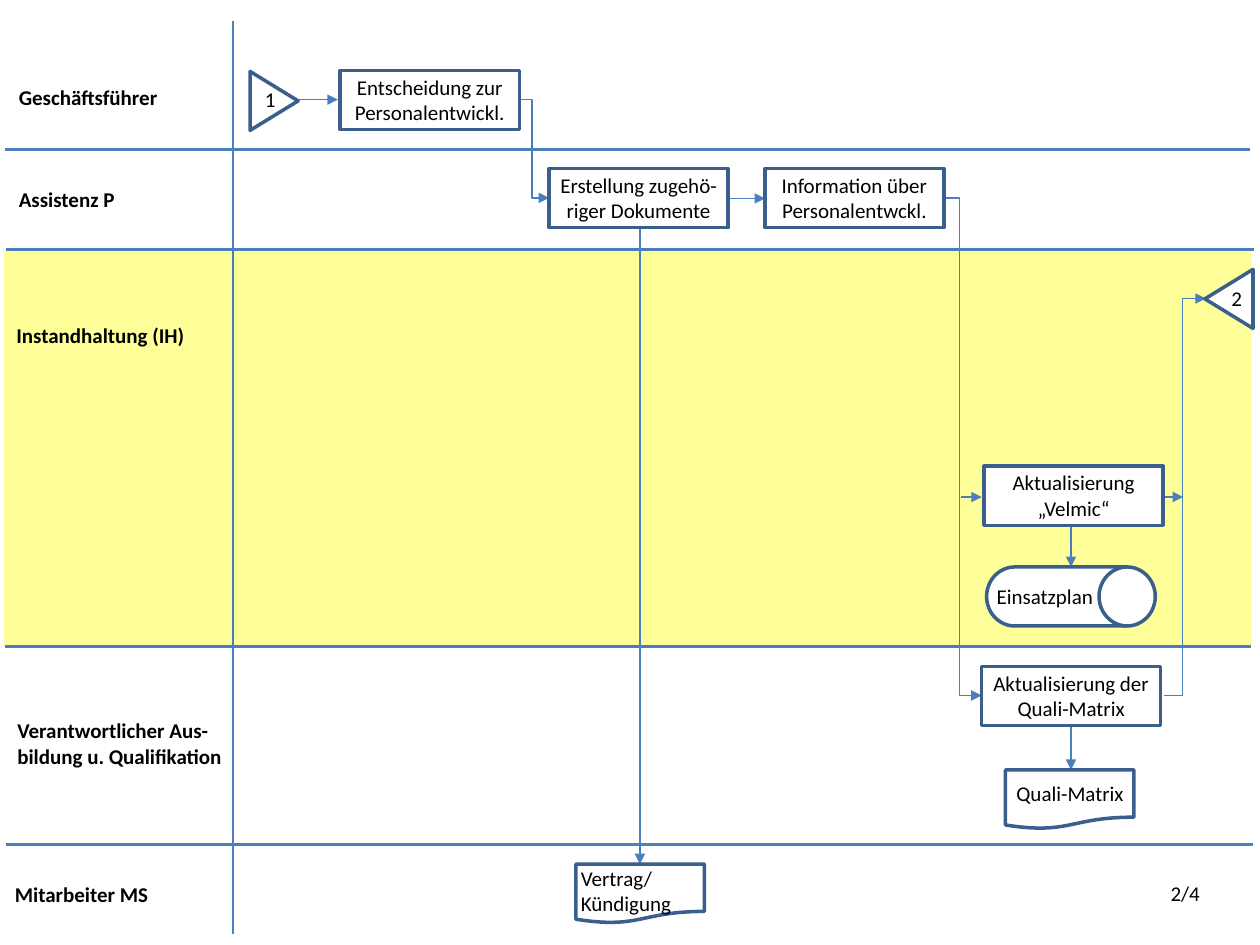
from dataclasses import dataclass

from lxml import etree
from pptx import Presentation
from pptx.dml.color import RGBColor
from pptx.enum.shapes import MSO_CONNECTOR, MSO_SHAPE
from pptx.enum.text import MSO_ANCHOR, MSO_AUTO_SIZE, PP_ALIGN
from pptx.oxml.ns import qn
from pptx.slide import Slide
from pptx.util import Cm, Pt

STRAIGHT, ELBOW = MSO_CONNECTOR.STRAIGHT, MSO_CONNECTOR.ELBOW
RECTANGLE = MSO_SHAPE.RECTANGLE
PROCESS = MSO_SHAPE.FLOWCHART_PROCESS
DOCUMENT = MSO_SHAPE.FLOWCHART_DOCUMENT
DRUM = MSO_SHAPE.FLOWCHART_DIRECT_ACCESS_STORAGE
TRIANGLE = MSO_SHAPE.FLOWCHART_EXTRACT
LEFT, CENTER, RIGHT = PP_ALIGN.LEFT, PP_ALIGN.CENTER, PP_ALIGN.RIGHT
TOP, MIDDLE = MSO_ANCHOR.TOP, MSO_ANCHOR.MIDDLE
FIT_SHAPE, FIXED = MSO_AUTO_SIZE.SHAPE_TO_FIT_TEXT, MSO_AUTO_SIZE.NONE

FONT = "Calibri"
BLACK, WHITE, YELLOW = "000000", "FFFFFF", "FFFF99"
FLOW_BLUE, OUTLINE_BLUE = "4B7EBC", "3A5F8C"
NODE_HEIGHT = 1.19
STEP_WIDTH = 3.61
STEP_LABEL_OVERHANG = 0.15
DOCUMENT_WIDTH = 2.59
TRIANGLE_HEIGHT = 0.97
LINE_HEIGHT, TEXT_MARGIN = 0.51, 0.25


@dataclass(frozen=True)
class Label:
    text: str
    left: float
    top: float
    width: float


@dataclass(frozen=True)
class Step:
    text: str
    left: float
    top: float


@dataclass(frozen=True)
class Node:
    kind: int
    left: float
    top: float
    width: float
    height: float = NODE_HEIGHT
    rotation: int = 0
    fill: str | None = WHITE


@dataclass(frozen=True)
class Flow:
    start: tuple[float, float]
    end: tuple[float, float]
    bend: float | None = None


LANE_LABELS = [
    Label("Geschäftsführer", 0.13, 1.57, 3.43),
    Label("Assistenz P", 0.13, 3.63, 2.46),
    Label("Instandhaltung (IH)", 0.08, 6.38, 3.96),
    Label("Verantwortlicher Aus-\nbildung u. Qualifikation", 0.1, 14.35, 4.88),
    Label("Mitarbeiter MS", 0.05, 17.65, 3.23),
]
LANE_BORDERS = [
    Flow((0.1, 3.02), (25.2, 3.02)),
    Flow((0.13, 5.03), (25.27, 5.03)),
    Flow((0.1, 13.03), (25.22, 13.03)),
    Flow((0.13, 17.02), (25.25, 17.02)),
    Flow((4.7, 18.82), (4.7, 0.43)),
]
STEPS = [
    Step("Entscheidung zur\nPersonalentwickl.", 6.86, 1.42),
    Step("Erstellung zugehö-\nriger Dokumente", 11.07, 3.4),
    Step("Information über\nPersonalentwckl.", 15.42, 3.4),
    Step("Aktualisierung\n„Velmic“", 19.84, 9.4),
    Step("Aktualisierung der\nQuali-Matrix", 19.79, 13.44),
]
NODES = [
    Node(TRIANGLE, 4.93, 1.55, NODE_HEIGHT, TRIANGLE_HEIGHT, 90),
    Node(TRIANGLE, 24.18, 5.54, NODE_HEIGHT, TRIANGLE_HEIGHT, 270),
    Node(DOCUMENT, 11.61, 17.42, DOCUMENT_WIDTH, fill=None),
    Node(DOCUMENT, 20.27, 15.52, DOCUMENT_WIDTH, fill=None),
    Node(DRUM, 19.89, 11.43, 3.4),
]
REFERENCE_LABELS = [Label("1", 5.08, 1.63, 0.74), Label("2", 24.56, 5.64, 0.74)]
RECORD_LABELS = [
    Label("Vertrag/\nKündigung", 11.46, 17.32, 2.34),
    Label("Quali-Matrix", 20.24, 15.62, 2.69),
    Label("Einsatzplan", 19.84, 11.63, 2.46),
]
FLOWS = [
    Flow((5.99, 2.01), (6.81, 2.01)),
    Flow((10.46, 2.01), (11.07, 3.99), 0.44),
    Flow((14.71, 4), (15.42, 4)),
    Flow((12.9, 4.62), (12.9, 17.42)),
    Flow((18.97, 3.99), (19.79, 14.02), 0.45),
    Flow((19.38, 10.02), (19.79, 10.02)),
    Flow((21.59, 10.62), (21.59, 11.43)),
    Flow((21.59, 14.63), (21.59, 15.52)),
    Flow((23.44, 10.02), (23.85, 10.02)),
    Flow((23.47, 14.02), (24.31, 6.02), 0.44),
]


def color(value: str) -> RGBColor:
    return RGBColor.from_string(value)


def add_text(slide: Slide, label: Label, *, bold=False, align=LEFT,
             anchor=TOP, wrap=False, fit=FIT_SHAPE, height=None) -> None:
    lines = label.text.split("\n")
    box_height = height or len(lines) * LINE_HEIGHT + TEXT_MARGIN
    frame = slide.shapes.add_textbox(
        Cm(label.left), Cm(label.top), Cm(label.width), Cm(box_height)
    ).text_frame
    frame.word_wrap = wrap
    frame.auto_size = fit
    frame.vertical_anchor = anchor
    frame.text = label.text
    for paragraph in frame.paragraphs:
        paragraph.alignment = align
        font = paragraph.runs[0].font
        font.name, font.size, font.bold = FONT, Pt(12), bold
        font.color.rgb = color(BLACK)


def add_node(slide: Slide, node: Node, outline: str | None = OUTLINE_BLUE) -> None:
    shape = slide.shapes.add_shape(
        node.kind, Cm(node.left), Cm(node.top), Cm(node.width), Cm(node.height)
    )
    shape.shadow.inherit = False
    shape.rotation = node.rotation
    if node.fill:
        shape.fill.solid()
        shape.fill.fore_color.rgb = color(node.fill)
    else:
        shape.fill.background()
    if outline:
        shape.line.color.rgb = color(outline)
        shape.line.width = Pt(2)
    else:
        shape.line.fill.background()


def add_step(slide: Slide, step: Step) -> None:
    add_node(slide, Node(PROCESS, step.left, step.top, STEP_WIDTH))
    label = Label(step.text, step.left - STEP_LABEL_OVERHANG, step.top - 0.05,
                  STEP_WIDTH + 2 * STEP_LABEL_OVERHANG)
    add_text(slide, label, align=CENTER)


def add_flow(slide: Slide, flow: Flow, width: float = 0.75, arrow: bool = True) -> None:
    kind = STRAIGHT if flow.bend is None else ELBOW
    points = [Cm(value) for value in (*flow.start, *flow.end)]
    connector = slide.shapes.add_connector(kind, *points)
    connector.line.color.rgb = color(FLOW_BLUE)
    connector.line.width = Pt(width)
    properties = connector._element.spPr
    if flow.bend is not None:
        adjustments = properties.find(qn("a:prstGeom")).get_or_add_avLst()
        etree.SubElement(adjustments, qn("a:gd"), name="adj1",
                         fmla=f"val {round(flow.bend * 100000)}")
    if arrow:
        etree.SubElement(properties.find(qn("a:ln")), qn("a:tailEnd"), type="triangle")
    etree.SubElement(properties, qn("a:effectLst"))


def main() -> None:
    presentation = Presentation()
    presentation.slide_width, presentation.slide_height = Cm(25.4), Cm(19.05)
    slide = presentation.slides.add_slide(presentation.slide_layouts[6])

    add_node(slide, Node(RECTANGLE, 0.08, 5.03, 25.15, 8, fill=YELLOW), outline=None)
    for label in LANE_LABELS:
        add_text(slide, label, bold=True)
    for border in LANE_BORDERS:
        add_flow(slide, border, width=1.5, arrow=False)
    for flow in FLOWS:
        add_flow(slide, flow)
    for step in STEPS:
        add_step(slide, step)
    for node in NODES:
        add_node(slide, node)
    for label in REFERENCE_LABELS:
        add_text(slide, label, align=CENTER)
    for label in RECORD_LABELS:
        add_text(slide, label)
    add_text(slide, Label("2/4", 23.32, 17.5, 1.12), align=RIGHT, anchor=MIDDLE,
             wrap=True, fit=FIXED, height=1.02)
    presentation.save("out.pptx")


if __name__ == "__main__":
    main()
